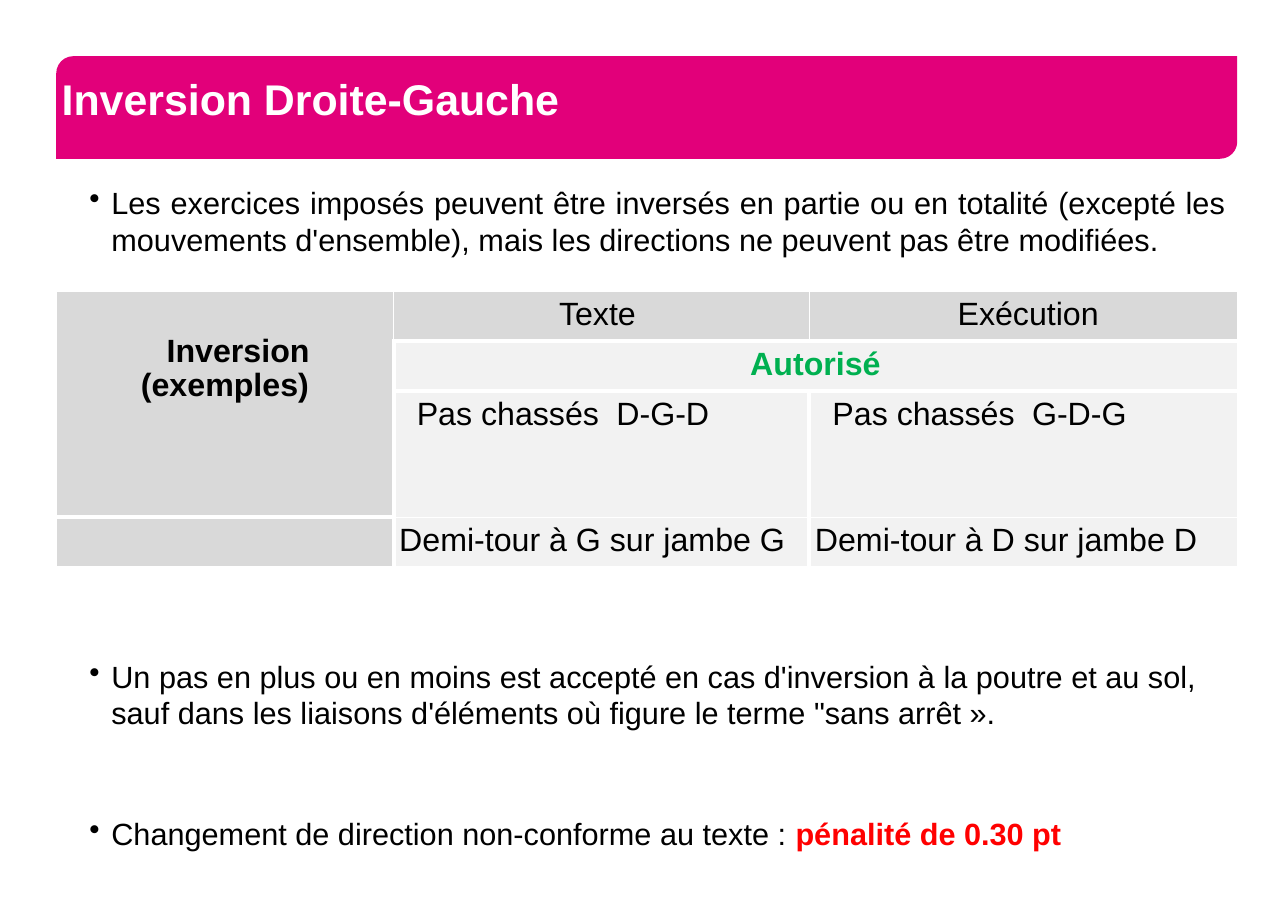
"""Build the slide on left-right inversion of compulsory exercises."""
from dataclasses import dataclass

import pptx
import pptx.dml.color
import pptx.enum.shapes
import pptx.enum.text
import pptx.oxml.ns
import pptx.util
from lxml import etree

Inches = pptx.util.Inches
Pt = pptx.util.Pt
ALIGN = pptx.enum.text.PP_ALIGN
qn = pptx.oxml.ns.qn


@dataclass(frozen=True)
class Theme:
    font: str = "Arial"
    banner: str = "E2007A"
    white: str = "FFFFFF"
    ink: str = "000000"
    allowed: str = "00B050"
    penalty: str = "FF0000"
    header: str = "D9D9D9"
    body: str = "F2F2F2"
    title_size: int = 28
    text_size: int = 20
    table_size: int = 21
    inset: float = 0.05
    thin: int = 1
    thick: int = 3


MARGIN, CONTENT_WIDTH = 0.51, 10.71
COLUMN_WIDTHS = (3.06, 3.77, 3.88)
ROW_HEIGHTS = (0.44, 0.45, 1.15, 0.45)
HEADER_ROW, VERDICT_ROW, STEPS_ROW, TURN_ROW = range(4)

RULES = [
    ("Les exercices imposés peuvent être inversés en partie ou en totalité "
     "(excepté les mouvements d'ensemble), mais les directions ne peuvent pas "
     "être modifiées.", "", 0, ALIGN.JUSTIFY),
    ("Un pas en plus ou en moins est accepté en cas d'inversion à la poutre et "
     "au sol, sauf dans les liaisons d'éléments où figure le terme "
     "\"sans arrêt ».", "", 261, ALIGN.LEFT),
    ("Changement de direction non-conforme au texte : ",
     "pénalité de 0.30 pt", 55, ALIGN.JUSTIFY),
]

EXAMPLES = [
    ("Texte", ALIGN.LEFT, 1.5, "D-G-D", "Demi-tour à G sur jambe G"),
    ("Exécution", ALIGN.CENTER, 0.14, "G-D-G", "Demi-tour à D sur jambe D"),
]


class RuleSlide:
    def __init__(self, deck, theme):
        self.theme = theme
        self.slide = deck.slides.add_slide(deck.slide_layouts[5])

    def style(self, font, size, color, bold=False):
        font.name = self.theme.font
        font.size = Pt(size)
        font.bold = bold
        font.color.rgb = pptx.dml.color.RGBColor.from_string(color)

    def fill(self, item, color):
        item.fill.solid()
        item.fill.fore_color.rgb = pptx.dml.color.RGBColor.from_string(color)

    def set_insets(self, holder):
        inset = Inches(self.theme.inset)
        holder.margin_left = holder.margin_right = inset
        holder.margin_top = holder.margin_bottom = inset

    def title(self, text, left, top, width, height):
        area = [Inches(length) for length in (left, top, width, height)]
        banner = self.slide.shapes.add_shape(
            pptx.enum.shapes.MSO_SHAPE.ROUND_2_DIAG_RECTANGLE, *area)
        banner.shadow.inherit = False
        banner.line.fill.background()
        self.fill(banner, self.theme.banner)
        heading = self.slide.shapes.title
        heading.element.addprevious(banner.element)
        heading.left, heading.top, heading.width, heading.height = area
        frame = heading.text_frame
        frame.text = text
        frame.word_wrap = True
        frame.vertical_anchor = pptx.enum.text.MSO_ANCHOR.MIDDLE
        self.set_insets(frame)
        paragraph = frame.paragraphs[0]
        paragraph.alignment = ALIGN.LEFT
        paragraph.line_spacing = Pt(22)
        self.style(paragraph.font, self.theme.title_size, self.theme.white, True)

    def bullets(self, rules, left, top, width, height):
        frame = self.slide.shapes.add_textbox(
            Inches(left), Inches(top), Inches(width), Inches(height)).text_frame
        frame.word_wrap = True
        self.set_insets(frame)
        for index, (text, warning, gap, alignment) in enumerate(rules):
            paragraph = frame.add_paragraph() if index else frame.paragraphs[0]
            paragraph.alignment = alignment
            paragraph.space_before = Pt(gap)
            properties = paragraph._p.get_or_add_pPr()
            properties.set("marL", str(Inches(0.4)))
            properties.set("indent", str(Inches(-0.2)))
            etree.SubElement(properties, qn("a:buChar"), char="•")
            self.style(paragraph.font, self.theme.text_size, self.theme.ink)
            paragraph.add_run().text = text
            if warning:
                run = paragraph.add_run()
                run.text = warning
                self.style(run.font, self.theme.text_size, self.theme.penalty, True)

    def table(self, left, top, widths, heights):
        grid = self.slide.shapes.add_table(
            len(heights), len(widths), Inches(left), Inches(top),
            Inches(sum(widths)), Inches(sum(heights))).table
        grid.first_row = grid.horz_banding = False
        for column, width in zip(grid.columns, widths):
            column.width = Inches(width)
        for row, height in zip(grid.rows, heights):
            row.height = Inches(height)
        return grid

    def borders(self, cell, thick_sides):
        properties = cell._tc.get_or_add_tcPr()
        for index, side in enumerate("LRTB"):
            width = self.theme.thick if side in thick_sides else self.theme.thin
            line = etree.Element(qn(f"a:ln{side}"), w=str(Pt(width)))
            solid = etree.SubElement(line, qn("a:solidFill"))
            etree.SubElement(solid, qn("a:srgbClr"), val=self.theme.white)
            properties.insert(index, line)

    def cell(self, cell, text, fill, thick_sides, color=None, bold=False,
             alignment=ALIGN.LEFT, left=None, top=None, tab=None):
        self.fill(cell, fill)
        self.borders(cell, thick_sides)
        self.set_insets(cell)
        if left:
            cell.margin_left = Inches(left)
        if top:
            cell.margin_top = Inches(top)
        cell.text = text
        for paragraph in cell.text_frame.paragraphs:
            paragraph.alignment = alignment
            if tab:
                tabs = etree.SubElement(paragraph._p.get_or_add_pPr(), qn("a:tabLst"))
                etree.SubElement(tabs, qn("a:tab"), pos=str(Inches(tab)), algn="l")
            self.style(paragraph.font, self.theme.table_size,
                       color or self.theme.ink, bold)

    def inversion_table(self, left, top):
        theme = self.theme
        grid = self.table(left, top, COLUMN_WIDTHS, ROW_HEIGHTS)
        topic = grid.cell(HEADER_ROW, 0)
        topic.merge(grid.cell(STEPS_ROW, 0))
        self.cell(topic, "Inversion\n(exemples)", theme.header, "B",
                  bold=True, alignment=ALIGN.CENTER, top=0.39)
        for line in topic.text_frame.paragraphs:
            line.line_spacing = 0.97
        first_line = topic.text_frame.paragraphs[0]
        first_line._p.get_or_add_pPr().set("marL", str(Inches(0.24)))
        self.cell(grid.cell(TURN_ROW, 0), "", theme.header, "RT")

        verdict = grid.cell(VERDICT_ROW, 1)
        verdict.merge(grid.cell(VERDICT_ROW, 2))
        self.cell(verdict, "Autorisé", theme.body, "LTB", color=theme.allowed,
                  bold=True, alignment=ALIGN.CENTER)

        for column, (label, alignment, indent, steps, turn) in enumerate(EXAMPLES, 1):
            sides = "LR" if column < len(EXAMPLES) else "L"
            self.cell(grid.cell(HEADER_ROW, column), label, theme.header, "B",
                      alignment=alignment, left=indent)
            self.cell(grid.cell(STEPS_ROW, column), f"Pas chassés\t{steps}",
                      theme.body, sides + "T", left=0.21, tab=1.81)
            self.cell(grid.cell(TURN_ROW, column), turn, theme.body, sides)


def main():
    deck = pptx.Presentation()
    deck.slide_width, deck.slide_height = Inches(11.68), Inches(8.26)
    page = RuleSlide(deck, Theme())
    page.title("Inversion Droite-Gauche", MARGIN, MARGIN, CONTENT_WIDTH, 0.93)
    page.bullets(RULES, 0.56, 1.62, 10.61, 6.2)
    page.inversion_table(MARGIN, 2.64)
    deck.save("out.pptx")


if __name__ == "__main__":
    main()
